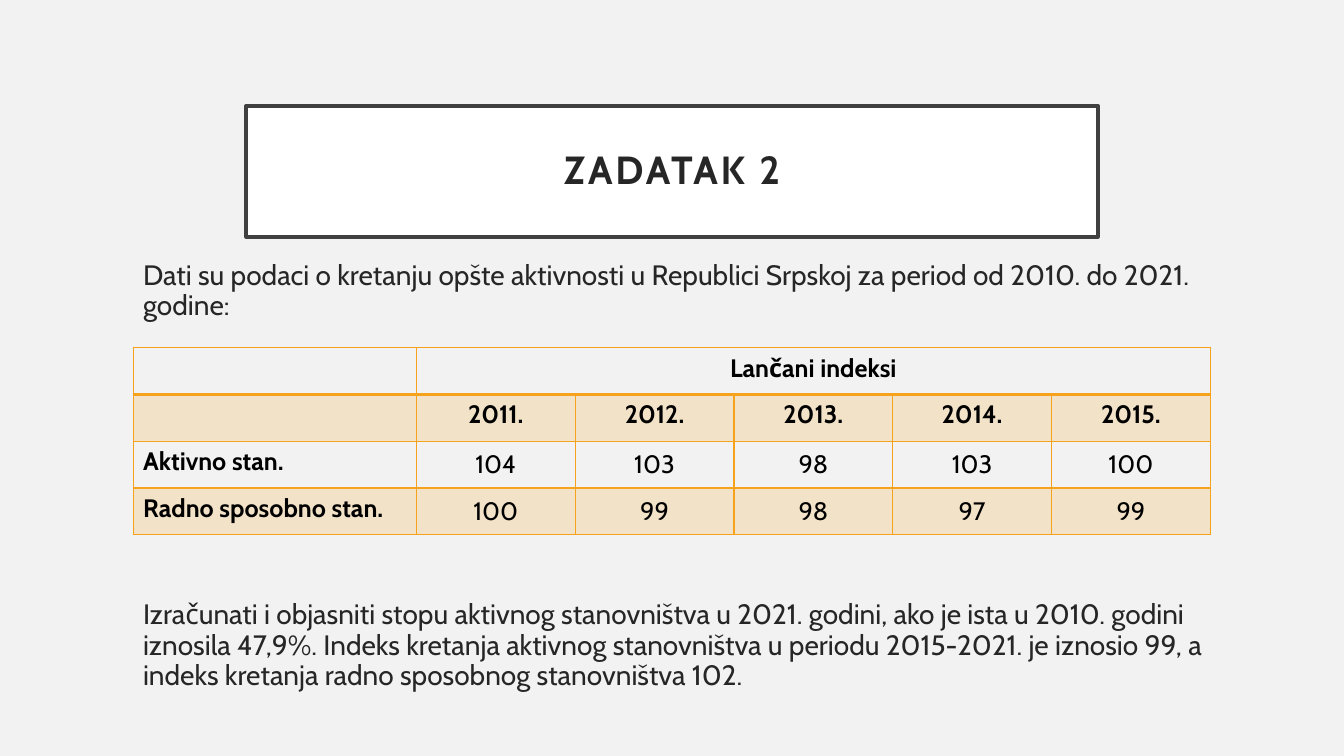
from lxml import etree
from pptx import Presentation
from pptx.dml.color import RGBColor
from pptx.enum.shapes import MSO_SHAPE
from pptx.enum.text import MSO_ANCHOR, PP_ALIGN
from pptx.oxml.ns import qn
from pptx.util import Inches, Pt

RECTANGLE = MSO_SHAPE.RECTANGLE
TOP, MIDDLE = MSO_ANCHOR.TOP, MSO_ANCHOR.MIDDLE
LEFT, CENTER = PP_ALIGN.LEFT, PP_ALIGN.CENTER

TITLE = "ZADATAK 2"
PARAGRAPHS = [  # top, height, text
    (2.54, 0.8, "Dati su podaci o kretanju opšte aktivnosti u Republici Srpskoj "
                "za period od 2010. do 2021. godine:"),
    (5.91, 1.16, "Izračunati i objasniti stopu aktivnog stanovništva u 2021. godini, "
                 "ako je ista u 2010. godini iznosila 47,9%. Indeks kretanja aktivnog "
                 "stanovništva u periodu 2015-2021. je iznosio 99, a indeks kretanja "
                 "radno sposobnog stanovništva 102."),
]
INDEX_ROWS = [
    ["", "Lančani indeksi", "", "", "", ""],
    ["", "2011.", "2012.", "2013.", "2014.", "2015."],
    ["Aktivno stan.", "104", "103", "98", "103", "100"],
    ["Radno sposobno stan.", "100", "99", "98", "97", "99"],
]
HEADER_ROWS = 2

COLORS = {"background": "F2F2F2", "panel": "FFFFFF", "frame": "404040",
          "text": "262626", "table_text": "000000", "accent": "F6A21D"}
FONT = "Cabin"
CONTENT_LEFT = 1.32
BODY_WIDTH = 10.91
TABLE_TOP, ROW_HEIGHT = 3.45, 0.464
LABEL_WIDTH, YEAR_WIDTH = 2.81, 1.575


def rgb(name):
    return RGBColor.from_string(COLORS[name])


def write(frame, text, size, color, bold=False, align=LEFT, line_spacing=None):
    paragraph = frame.paragraphs[0]
    paragraph.alignment = align
    paragraph.line_spacing = line_spacing
    run = paragraph.add_run()
    run.text = text
    for key, value in {"name": FONT, "size": Pt(size), "bold": bold}.items():
        setattr(run.font, key, value)
    run.font.color.rgb = rgb(color)
    return run


def set_format(target, values):
    for key, value in values.items():
        setattr(target, key, value)


def add_borders(cell, bottom_width):
    properties = cell._tc.get_or_add_tcPr()
    widths = {"a:lnL": 1, "a:lnR": 1, "a:lnT": 1, "a:lnB": bottom_width}
    for tag, width in widths.items():
        border = etree.SubElement(properties, qn(tag), w=str(Pt(width)))
        fill = etree.SubElement(border, qn("a:solidFill"))
        etree.SubElement(fill, qn("a:srgbClr"), val=COLORS["accent"])


def tint(cell):
    """Fill a cell with the accent colour at 20% opacity."""
    cell.fill.solid()
    cell.fill.fore_color.rgb = rgb("accent")
    color = cell._tc.tcPr.find(qn("a:solidFill")).find(qn("a:srgbClr"))
    etree.SubElement(color, qn("a:alpha"), val="20000")


def add_title(slide):
    title = slide.shapes.add_shape(RECTANGLE, Inches(2.44), Inches(1.05),
                                   Inches(8.45), Inches(1.3))
    title.shadow.inherit = False
    title.fill.solid()
    title.fill.fore_color.rgb = rgb("panel")
    title.line.color.rgb = rgb("frame")
    title.line.width = Pt(2.5)
    margins = {f"margin_{side}": Inches(0.2) for side in ("left", "right", "top", "bottom")}
    set_format(title.text_frame, {"word_wrap": True, "vertical_anchor": MIDDLE, **margins})
    run = write(title.text_frame, TITLE, 28, "text", True, CENTER, 0.9)
    run.font._element.set("spc", "200")


def add_paragraph(slide, top, height, text):
    body = slide.shapes.add_textbox(Inches(CONTENT_LEFT), Inches(top),
                                    Inches(BODY_WIDTH), Inches(height))
    body.text_frame.word_wrap = True
    write(body.text_frame, text, 20, "text", line_spacing=0.9)


def add_index_table(slide):
    rows, columns = len(INDEX_ROWS), len(INDEX_ROWS[0])
    widths = [LABEL_WIDTH] + [YEAR_WIDTH] * (columns - 1)
    table = slide.shapes.add_table(
        rows, columns, Inches(CONTENT_LEFT), Inches(TABLE_TOP),
        Inches(sum(widths)), Inches(rows * ROW_HEIGHT)).table
    set_format(table, {"first_row": False, "horz_banding": False})
    for column, width in zip(table.columns, widths):
        column.width = Inches(width)
    for row in table.rows:
        row.height = Inches(ROW_HEIGHT)
    table.cell(0, 1).merge(table.cell(0, columns - 1))

    for r, values in enumerate(INDEX_ROWS):
        for c, text in enumerate(values):
            cell = table.cell(r, c)
            is_value = r >= HEADER_ROWS and c > 0
            add_borders(cell, 2 if r == 0 else 1)
            if r % 2:
                tint(cell)
            else:
                cell.fill.background()
            cell.vertical_anchor = MIDDLE if is_value else TOP
            if is_value:
                set_format(cell, {"margin_left": Inches(0.07), "margin_right": Inches(0.07),
                                  "margin_top": 0, "margin_bottom": 0})
            if text:
                write(cell.text_frame, text, 18, "table_text", not is_value,
                      CENTER if c else LEFT)


def main():
    deck = Presentation()
    deck.slide_width, deck.slide_height = Inches(13.33), Inches(7.5)
    slide = deck.slides.add_slide(deck.slide_layouts[6])
    slide.background.fill.solid()
    slide.background.fill.fore_color.rgb = rgb("background")
    add_title(slide)
    for top, height, text in PARAGRAPHS:
        add_paragraph(slide, top, height, text)
    add_index_table(slide)
    deck.save("out.pptx")


if __name__ == "__main__":
    main()
